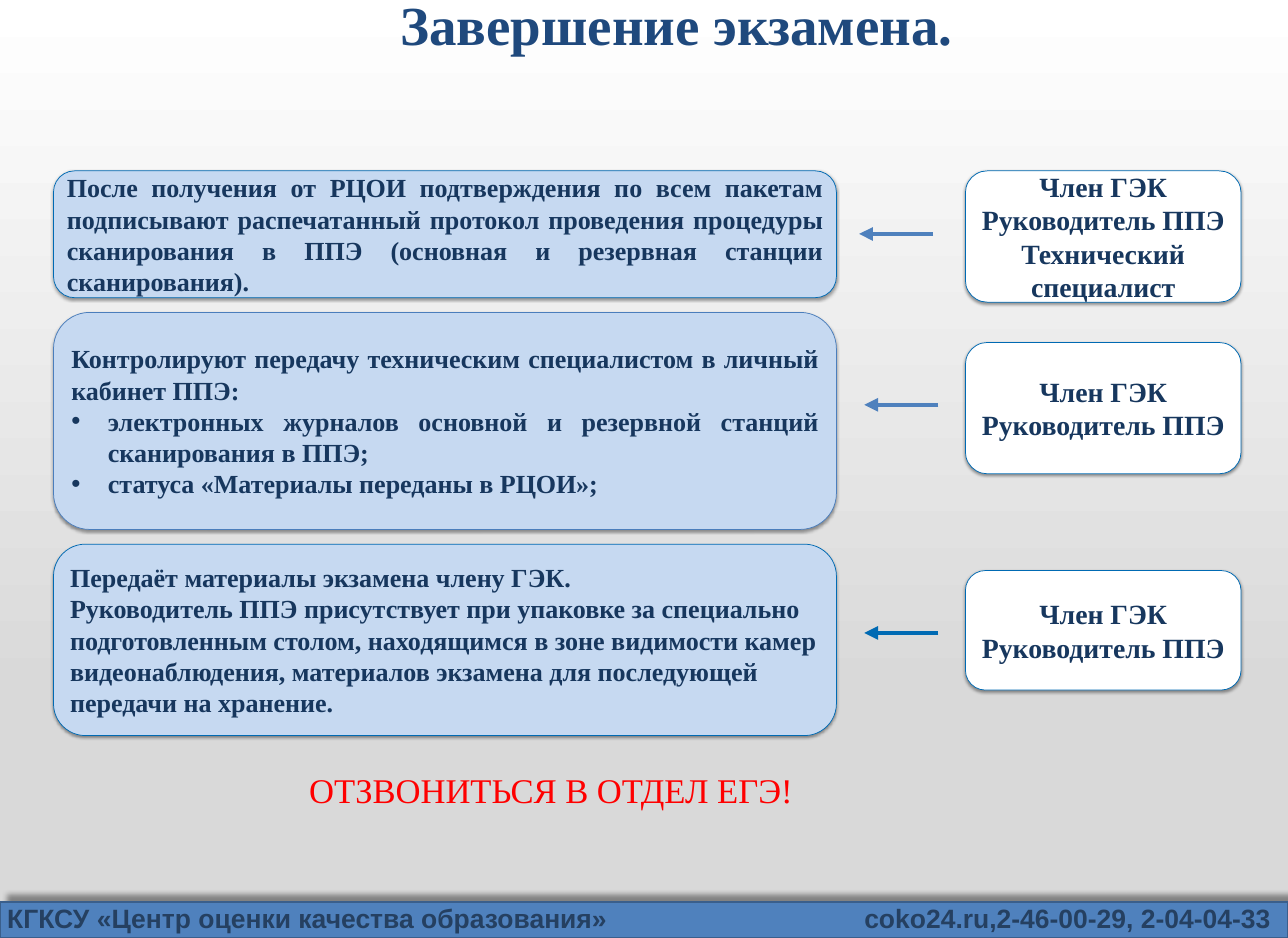
from lxml import etree
from pptx import Presentation
from pptx.dml.color import RGBColor
from pptx.enum.shapes import MSO_CONNECTOR, MSO_SHAPE
from pptx.enum.text import MSO_ANCHOR, MSO_AUTO_SIZE, PP_ALIGN
from pptx.oxml.ns import qn
from pptx.util import Inches, Pt

RECT, ROUNDED = MSO_SHAPE.RECTANGLE, MSO_SHAPE.ROUNDED_RECTANGLE
LEFT, CENTER, JUSTIFY = PP_ALIGN.LEFT, PP_ALIGN.CENTER, PP_ALIGN.JUSTIFY
STRAIGHT = MSO_CONNECTOR.STRAIGHT
MIDDLE = MSO_ANCHOR.MIDDLE

WHITE = RGBColor(0xFF, 0xFF, 0xFF)
GREY = RGBColor(0xD9, 0xD9, 0xD9)
RED = RGBColor(0xFF, 0x00, 0x00)
NAVY = RGBColor(0x17, 0x37, 0x5E)
TITLE_BLUE = RGBColor(0x1F, 0x49, 0x7D)
FOOTER_TEXT = RGBColor(0x25, 0x40, 0x61)
PALE_BLUE = RGBColor(0xC6, 0xD9, 0xF1)
BLUE = RGBColor(0x4F, 0x81, 0xBD)
BAR_EDGE = RGBColor(0x3A, 0x5F, 0x8C)
SOFT_EDGE = RGBColor(0x4B, 0x7E, 0xBC)
EDGE = RGBColor(0x00, 0x6A, 0xB3)


def write(tf, text, size, color, font="Times New Roman", bold=True,
          align=LEFT, bullet=False, tab=None):
    """Fill the empty first paragraph of a frame, or add one; tab is a right stop in inches."""
    p = tf.paragraphs[0] if not tf.paragraphs[0].runs else tf.add_paragraph()
    p.alignment = align
    pPr = p._p.get_or_add_pPr()
    if bullet:
        pPr.set("marL", str(Inches(0.5)))
        pPr.set("indent", str(-Inches(0.5)))
        etree.SubElement(pPr, qn("a:buFont"), typeface="Arial")
        etree.SubElement(pPr, qn("a:buChar"), char="•")
    if tab:
        tabs = etree.SubElement(pPr, qn("a:tabLst"))
        etree.SubElement(tabs, qn("a:tab"), pos=str(Inches(tab)), algn="r")
    r = p.add_run()
    r.text = text
    r.font.name, r.font.size, r.font.bold = font, Pt(size), bold
    r.font.color.rgb = color


def add_box(kind, left, top, width, height, fill, edge, edge_width=0.75,
            blur=3.1, distance=1.6, angle=90, opacity=38):
    """Add a filled shape with an outer shadow and return its text frame."""
    sp = s.shapes.add_shape(kind, Inches(left), Inches(top), Inches(width), Inches(height))
    sp.fill.solid()
    sp.fill.fore_color.rgb = fill
    sp.line.color.rgb = edge
    sp.line.width = Pt(edge_width)
    sp.shadow.inherit = False
    effects = sp._element.spPr.find(qn("a:effectLst"))
    shadow = etree.SubElement(effects, qn("a:outerShdw"), blurRad=str(Pt(blur)),
                              dist=str(Pt(distance)), dir=str(angle * 60000), rotWithShape="0")
    color = etree.SubElement(shadow, qn("a:srgbClr"), val="000000")
    etree.SubElement(color, qn("a:alpha"), val=str(opacity * 1000))
    tf = sp.text_frame
    tf.word_wrap = True
    tf.vertical_anchor = MIDDLE
    return tf


prs = Presentation()
prs.slide_width, prs.slide_height = Inches(17.57), Inches(12.79)
s = prs.slides.add_slide(prs.slide_layouts[5])

background = s.background.fill
background.gradient()
background.gradient_angle = 270
for stop, position, color in zip(background.gradient_stops, (0, 0.74), (WHITE, GREY)):
    stop.position = position
    stop.color.rgb = color

# Footer
add_box(RECT, 0, 12.3, 17.57, 0.49, BLUE, BAR_EDGE, edge_width=2,
        blur=4, distance=10, angle=315, opacity=40)
footer = s.shapes.add_textbox(0, Inches(12.25), Inches(17.47), Inches(0.54))
footer.text_frame.word_wrap = True
write(footer.text_frame, "КГКСУ «Центр оценки качества образования»\tcoko24.ru,2-46-00-29, 2-04-04-33",
      26, FOOTER_TEXT, font="Arial", tab=17.24)

# Title
title = s.shapes.title
title.left, title.top = Inches(2.52), Inches(-0.09)
title.width, title.height = Inches(13.42), Inches(0.81)
tf = title.text_frame
tf.auto_size = MSO_AUTO_SIZE.NONE
tf.vertical_anchor = MIDDLE
tf.margin_left = tf.margin_right = Inches(0.19)
tf.margin_top = tf.margin_bottom = Inches(0.09)
write(tf, "Завершение экзамена.", 54, TITLE_BLUE, align=CENTER)

# Actions: top, height, edge, paragraphs of (text, alignment, bullet)
actions = [
    (2.33, 1.73, EDGE, [
        ("После получения от РЦОИ подтверждения по всем пакетам подписывают распечатанный "
         "протокол проведения процедуры сканирования в ППЭ (основная и резервная станции "
         "сканирования).", JUSTIFY, False)]),
    (4.26, 2.96, SOFT_EDGE, [
        ("Контролируют передачу техническим специалистом в личный кабинет ППЭ:", JUSTIFY, False),
        ("электронных журналов основной и резервной станций сканирования в ППЭ;", JUSTIFY, True),
        ("статуса «Материалы переданы в РЦОИ»;", JUSTIFY, True)]),
    (7.42, 2.61, EDGE, [
        ("Передаёт материалы экзамена члену ГЭК.", LEFT, False),
        ("Руководитель ППЭ присутствует при упаковке за специально подготовленным столом, "
         "находящимся в зоне видимости камер видеонаблюдения, материалов экзамена для "
         "последующей передачи на хранение.", LEFT, False)]),
]
for top, height, edge, paragraphs in actions:
    tf = add_box(ROUNDED, 0.73, top, 10.68, height, PALE_BLUE, edge)
    for text, align, bullet in paragraphs:
        write(tf, text, 25.6, NAVY, align=align, bullet=bullet)

# People in charge: top, height, paragraphs
staff = "Член ГЭК Руководитель ППЭ"
roles = [
    (2.33, 1.79, [staff, "Технический специалист"]),
    (4.67, 1.79, [staff]),
    (7.78, 1.63, [staff]),
]
for top, height, paragraphs in roles:
    tf = add_box(ROUNDED, 13.17, top, 3.76, height, WHITE, EDGE)
    for text in paragraphs:
        write(tf, text, 27.3, NAVY, align=CENTER)

# Arrows from people to actions
for start, y, color in [(12.73, 3.19, BLUE), (12.8, 5.52, BLUE), (12.8, 8.63, EDGE)]:
    arrow = s.shapes.add_connector(STRAIGHT, Inches(start), Inches(y), Inches(start - 1.01), Inches(y))
    arrow.line.color.rgb = color
    arrow.line.width = Pt(4.5)
    etree.SubElement(arrow.line._get_or_add_ln(), qn("a:tailEnd"), type="triangle")
    etree.SubElement(arrow._element.spPr, qn("a:effectLst"))

# Reminder
reminder = s.shapes.add_textbox(Inches(4.12), Inches(10.43), Inches(7.29), Inches(0.67))
reminder.text_frame.word_wrap = True
write(reminder.text_frame, "ОТЗВОНИТЬСЯ В ОТДЕЛ ЕГЭ!", 34, RED, bold=False)

prs.save("out.pptx")
